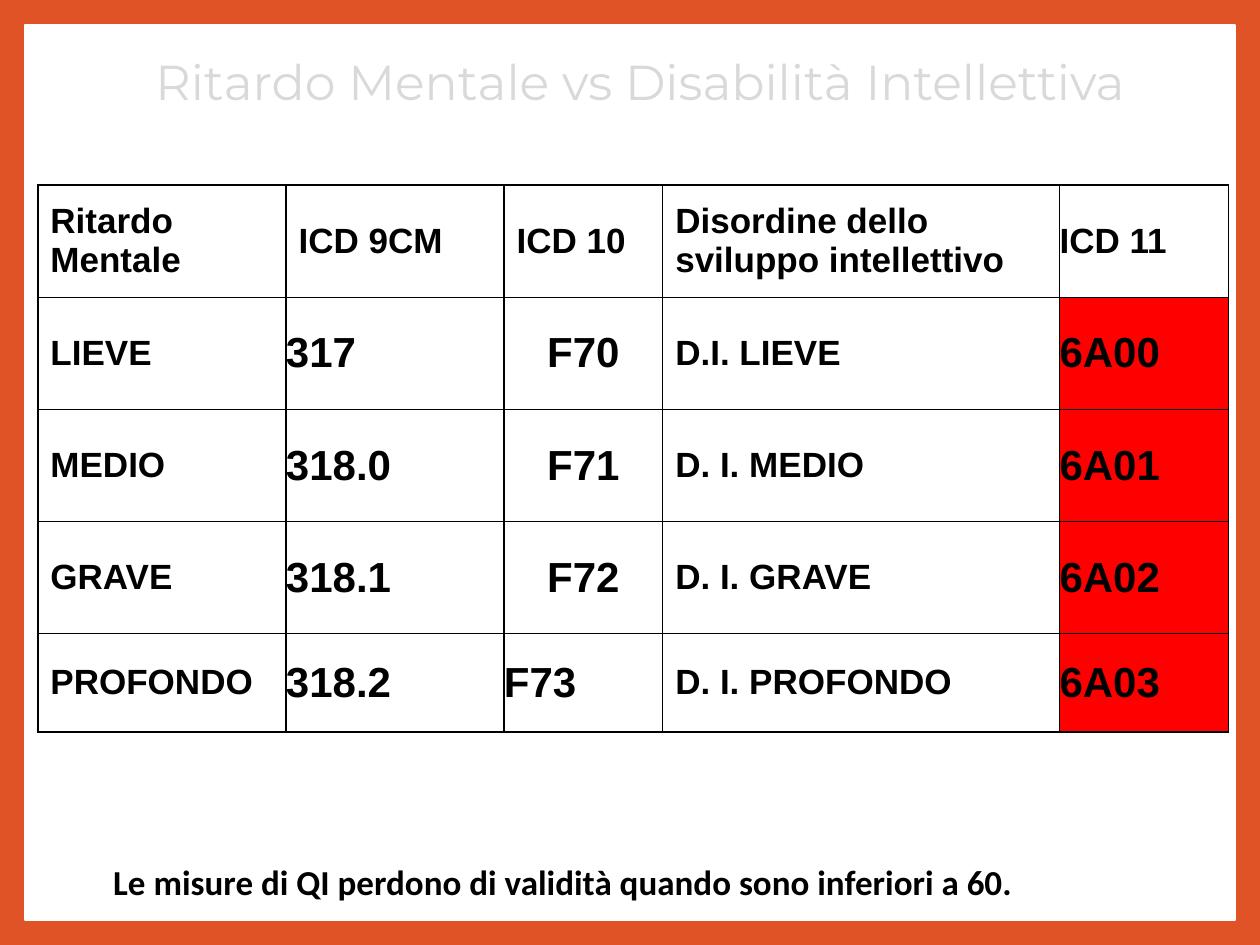
import pptx
import pptx.dml.color
import pptx.enum.shapes
import pptx.enum.text
import pptx.oxml
import pptx.oxml.ns
import pptx.util

Inches = pptx.util.Inches
Align = pptx.enum.text.PP_ALIGN
Anchor = pptx.enum.text.MSO_ANCHOR

WIDTH, HEIGHT = 10, 7.5
MARGIN = 0.2
TITLE = "Ritardo Mentale vs Disabilità Intellettiva"
NOTE = "Le misure di QI perdono di validità quando sono inferiori a 60."
ROWS = [
    ("Ritardo Mentale", "ICD 9CM", "ICD 10", "Disordine dello sviluppo intellettivo", "ICD 11"),
    ("LIEVE", "317", "F70", "D.I. LIEVE", "6A00"),
    ("MEDIO", "318.0", "F71", "D. I. MEDIO", "6A01"),
    ("GRAVE", "318.1", "F72", "D. I. GRAVE", "6A02"),
    ("PROFONDO", "318.2", "F73", "D. I. PROFONDO", "6A03"),
]
COLUMN_WIDTHS = (1.97, 1.73, 1.26, 3.15, 1.34)
ROW_HEIGHTS = (0.89, 0.89, 0.89, 0.89, 0.78)
NAME_COLUMNS = (0, 3)
CENTRED_CODES = ("F70", "F71", "F72")
LABEL = {"name": "Arial", "size": 20, "bold": True, "color": "000000"}
CODE = {**LABEL, "size": 24}
HEADING = {"name": "Montserrat", "size": 28, "bold": False, "color": "D9D9D9"}
REMARK = {**LABEL, "name": "Calibri"}


def paint(fill, color):
    """Give a fill one solid colour."""
    fill.solid()
    fill.fore_color.rgb = pptx.dml.color.RGBColor.from_string(color)


def write(frame, text, style, align=Align.LEFT):
    """Write one formatted paragraph."""
    para = frame.paragraphs[0]
    para.alignment = align
    span = para.add_run()
    span.text = text
    values = {**style, "size": pptx.util.Pt(style["size"])}
    paint(span.font.fill, values.pop("color"))
    for name, value in values.items():
        setattr(span.font, name, value)


def add_text(page, area, text, style, align=Align.LEFT):
    """Add a wrapping text box."""
    box = page.shapes.add_textbox(*map(Inches, area))
    box.text_frame.word_wrap = True
    box.text_frame.vertical_anchor = Anchor.MIDDLE
    write(box.text_frame, text, style, align)


def add_borders(cell):
    """Draw a thin black line on each side of a cell."""
    properties = cell._tc.get_or_add_tcPr()
    for side in "LRTB":
        properties.append(pptx.oxml.parse_xml(
            f'<a:ln{side} {pptx.oxml.ns.nsdecls("a")} w="12700"><a:solidFill>'
            f'<a:srgbClr val="000000"/></a:solidFill></a:ln{side}>'))


def fill_cell(cell, text, row, column):
    """Format and fill one cell according to its place in the grid."""
    is_last = column == len(COLUMN_WIDTHS) - 1
    is_label = column in NAME_COLUMNS or (row == 0 and not is_last)
    side, edge = (0.1, 0.05) if is_label else (0, 0)
    layout = {"vertical_anchor": Anchor.MIDDLE,
              "margin_left": Inches(side), "margin_right": Inches(side),
              "margin_top": Inches(edge), "margin_bottom": Inches(edge)}
    for name, value in layout.items():
        setattr(cell, name, value)
    add_borders(cell)
    if is_last and row > 0:
        paint(cell.fill, "FF0000")
    else:
        cell.fill.background()
    write(cell.text_frame, text, LABEL if is_label or row == 0 else CODE,
          Align.CENTER if text in CENTRED_CODES else Align.LEFT)


def add_codes(page):
    """Add the table of diagnostic codes."""
    area = (0.3, 1.47, sum(COLUMN_WIDTHS), sum(ROW_HEIGHTS))
    table = page.shapes.add_table(len(ROWS), len(COLUMN_WIDTHS), *map(Inches, area)).table
    table.first_row = table.horz_banding = False
    for column, width in zip(table.columns, COLUMN_WIDTHS):
        column.width = Inches(width)
    for row, height in zip(table.rows, ROW_HEIGHTS):
        row.height = Inches(height)
    for row, texts in enumerate(ROWS):
        for column, text in enumerate(texts):
            fill_cell(table.cell(row, column), text, row, column)


def main():
    """Build and save the slide."""
    deck = pptx.Presentation()
    deck.slide_width, deck.slide_height = Inches(WIDTH), Inches(HEIGHT)
    page = deck.slides.add_slide(deck.slide_layouts[6])
    paint(page.background.fill, "DF5327")
    area = (MARGIN, MARGIN, WIDTH - 2 * MARGIN, HEIGHT - 2 * MARGIN)
    panel = page.shapes.add_shape(
        pptx.enum.shapes.MSO_SHAPE.RECTANGLE, *map(Inches, area))
    panel.shadow.inherit = False
    paint(panel.fill, "FFFFFF")
    paint(panel.line.fill, "FFFFFF")
    panel.line.width = pptx.util.Pt(1)
    add_text(page, (0.58, 0.27, 9, 0.75), TITLE, HEADING, Align.CENTER)
    add_codes(page)
    add_text(page, (0.8, 6.78, 7.92, 0.44), NOTE, REMARK)
    deck.save("out.pptx")


if __name__ == "__main__":
    main()
